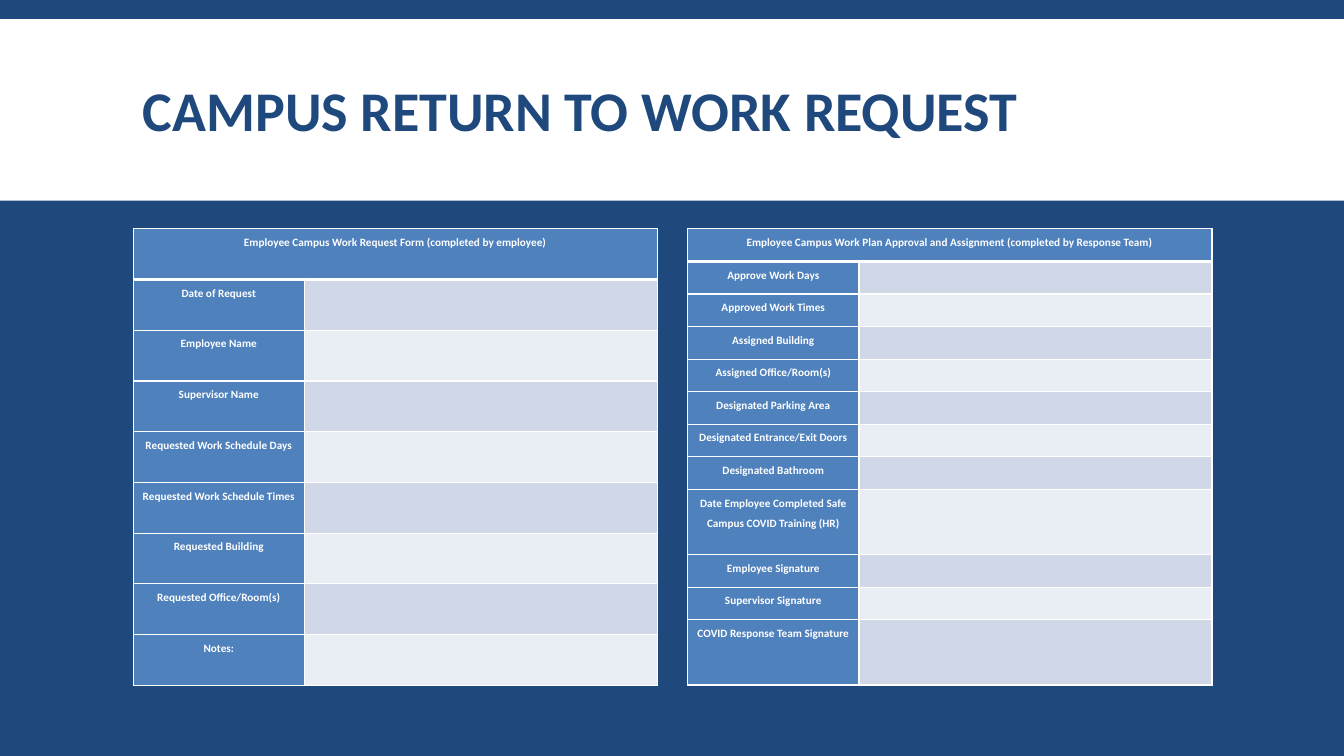
from lxml.etree import SubElement
from pptx import Presentation
from pptx.dml.color import RGBColor
from pptx.enum.shapes import MSO_SHAPE
from pptx.enum.text import MSO_ANCHOR, PP_ALIGN
from pptx.oxml.ns import qn
from pptx.util import Inches, Pt

COLORS = {
    "navy": "1F497D",
    "white": "FFFFFF",
    "label": "4F81BD",
    "odd": "D0D8E8",
    "even": "E9EDF4",
}
FONT = "Calibri"
WIDTH, HEIGHT = 13.33, 7.5
MARGIN, CONTENT_WIDTH = 1.32, 10.7
FORM_TOP, FORM_WIDTH, FORM_HEIGHT = 2.27, 5.2, 4.53
LABEL_WIDTH = 1.7

REQUEST_ROWS = [
    ("Employee Campus Work Request Form (completed by employee)", 1),
    ("Date of Request", 1),
    ("Employee Name", 1),
    ("Supervisor Name", 1),
    ("Requested Work Schedule Days", 1),
    ("Requested Work Schedule Times", 1),
    ("Requested Building", 1),
    ("Requested Office/Room(s)", 1),
    ("Notes:", 1),
]
APPROVAL_ROWS = [
    ("Employee Campus Work Plan Approval and Assignment (completed by Response Team)", 1),
    ("Approve Work Days", 1),
    ("Approved Work Times", 1),
    ("Assigned Building", 1),
    ("Assigned Office/Room(s)", 1),
    ("Designated Parking Area", 1),
    ("Designated Entrance/Exit Doors", 1),
    ("Designated Bathroom", 1),
    ("Date Employee Completed Safe Campus COVID Training (HR)", 2),
    ("Employee Signature", 1),
    ("Supervisor Signature", 1),
    ("COVID Response Team Signature", 2),
]


def paint(fill, color):
    fill.solid()
    fill.fore_color.rgb = RGBColor.from_string(COLORS[color])


def style_font(font, size, color):
    font.name = FONT
    font.size = Pt(size)
    font.bold = True
    font.color.rgb = RGBColor.from_string(COLORS[color])


def add_band(slide, top, height):
    band = slide.shapes.add_shape(
        MSO_SHAPE.RECTANGLE, 0, Inches(top), Inches(WIDTH), Inches(height))
    band.shadow.inherit = False
    paint(band.fill, "white")
    band.line.fill.background()


def add_title(slide, text):
    box = slide.shapes.add_textbox(
        Inches(MARGIN), Inches(0.31), Inches(CONTENT_WIDTH), Inches(1.65))
    frame = box.text_frame
    frame.word_wrap = True
    frame.vertical_anchor = MSO_ANCHOR.MIDDLE
    paragraph = frame.paragraphs[0]
    paragraph.text = text
    paragraph.line_spacing = 0.85
    style_font(paragraph.font, 40, "navy")


def set_borders(cell, top, bottom):
    properties = cell._tc.get_or_add_tcPr()
    for side, width in (("L", 1), ("R", 1), ("T", top), ("B", bottom)):
        line = SubElement(properties, qn(f"a:ln{side}"), w=str(Pt(width)))
        solid = SubElement(line, qn("a:solidFill"))
        SubElement(solid, qn("a:srgbClr"), val=COLORS["white"])


def style_cell(cell, text, color):
    cell.margin_left = cell.margin_right = Inches(0.05)
    cell.margin_top = cell.margin_bottom = 0
    paint(cell.fill, color)
    paragraph = cell.text_frame.paragraphs[0]
    paragraph.text = text
    paragraph.alignment = PP_ALIGN.CENTER
    paragraph.line_spacing = 1.5
    style_font(paragraph.font, 8, "white")


def add_form(slide, left, rows):
    table = slide.shapes.add_table(
        len(rows), 2, Inches(left), Inches(FORM_TOP),
        Inches(FORM_WIDTH), Inches(FORM_HEIGHT)).table
    table.columns[0].width = Inches(LABEL_WIDTH)
    table.columns[1].width = Inches(FORM_WIDTH - LABEL_WIDTH)
    unit = FORM_HEIGHT / sum(share for _, share in rows)
    for index, (label, share) in enumerate(rows):
        table.rows[index].height = Inches(unit * share)
        answer_color = "odd" if index % 2 else "even"
        colors = ("label", answer_color if index else "label")
        for column, (text, color) in enumerate(zip((label, ""), colors)):
            cell = table.cell(index, column)
            set_borders(cell, 3 if index == 1 else 1, 3 if index == 0 else 1)
            style_cell(cell, text, color)
    table.cell(0, 0).merge(table.cell(0, 1))


def main():
    presentation = Presentation()
    presentation.slide_width = Inches(WIDTH)
    presentation.slide_height = Inches(HEIGHT)
    slide = presentation.slides.add_slide(presentation.slide_layouts[6])
    paint(slide.background.fill, "navy")
    add_band(slide, 0.19, 1.8)
    add_title(slide, "CAMPUS RETURN TO WORK REQUEST")
    add_form(slide, MARGIN, REQUEST_ROWS)
    add_form(slide, MARGIN + CONTENT_WIDTH - FORM_WIDTH, APPROVAL_ROWS)
    presentation.save("out.pptx")


if __name__ == "__main__":
    main()
